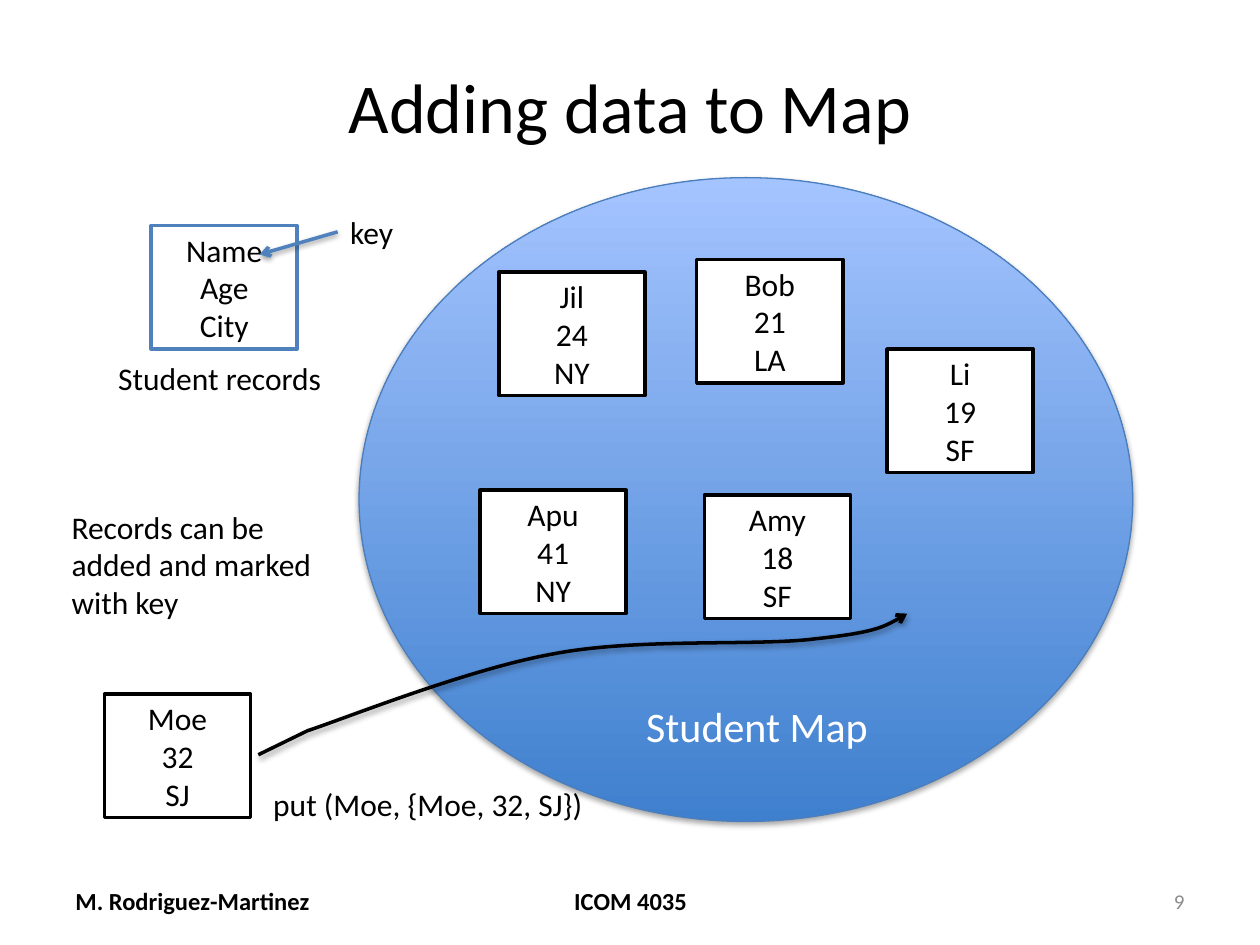
from lxml import etree
from pptx import Presentation
from pptx.dml.color import RGBColor
from pptx.enum.shapes import MSO_CONNECTOR, MSO_SHAPE
from pptx.enum.text import MSO_ANCHOR, MSO_AUTO_SIZE, PP_ALIGN
from pptx.oxml.ns import qn
from pptx.util import Inches, Pt

LEFT, MID, RIGHT = PP_ALIGN.LEFT, PP_ALIGN.CENTER, PP_ALIGN.RIGHT
TOP, HALF = MSO_ANCHOR.TOP, MSO_ANCHOR.MIDDLE
GROW = MSO_AUTO_SIZE.SHAPE_TO_FIT_TEXT
RECT, OVAL = MSO_SHAPE.RECTANGLE, MSO_SHAPE.OVAL
LINE = MSO_CONNECTOR.STRAIGHT
BLACK, WHITE, BLUE, GREY = "000000", "FFFFFF", "4F81BD", "8C8C8C"
COLS = 100
CARD = (11.6, 9.8)


def tint(code):
    return RGBColor.from_string(code)


class Deck:
    """Draws styled elements on a slide grid of 100 columns by 75 rows."""

    def __init__(self):
        self.show = Presentation()
        self.show.slide_width, self.show.slide_height = Inches(10), Inches(7.5)
        self.unit = self.show.slide_width / COLS
        self.font = "Calibri"
        self.slide = self.show.slides.add_slide(self.show.slide_layouts[6])

    def grid(self, *cells):
        return [round(cell * self.unit) for cell in cells]

    def fill_in(self, frame, lines, size, color, align, bold=False):
        for num, line in enumerate(lines):
            para = frame.add_paragraph() if num else frame.paragraphs[0]
            para.alignment = align
            run = para.add_run()
            run.text = line
            run.font.name, run.font.size, run.font.bold = self.font, Pt(size), bold
            run.font.color.rgb = tint(color)

    def text(self, place, lines, size=18, color=BLACK, align=LEFT, bold=False, fit=False):
        frame = self.slide.shapes.add_textbox(*self.grid(*place)).text_frame
        frame.word_wrap = not fit
        frame.vertical_anchor = TOP if fit else HALF
        if fit:
            frame.auto_size = GROW
        self.fill_in(frame, lines, size, color, align, bold)

    def label(self, place, *lines, size=18, color=BLACK):
        self.text(place, lines, size, color, fit=True)

    def stroke(self, shape, color, width=2):
        shape.line.color.rgb = tint(color)
        shape.line.width = Pt(width)

    def shade(self, shape, alpha, gap):
        props = shape.element.spPr
        group = props.find(qn("a:effectLst"))
        if group is None:
            group = etree.SubElement(props, qn("a:effectLst"))
        drop = etree.SubElement(group, qn("a:outerShdw"), blurRad=str(Pt(3.1)),
                                dist=str(Pt(gap)), dir="5400000", rotWithShape="0")
        ink = etree.SubElement(drop, qn("a:srgbClr"), val=BLACK)
        etree.SubElement(ink, qn("a:alpha"), val=str(alpha * 1000))

    def point(self, shape, color):
        self.stroke(shape, color)
        line = shape.element.spPr.find(qn("a:ln"))
        etree.SubElement(line, qn("a:tailEnd"), type="arrow")
        self.shade(shape, 38, 1.6)

    def card(self, left, top, lines, color=BLACK):
        box = self.slide.shapes.add_shape(RECT, *self.grid(left, top, *CARD))
        box.shadow.inherit = False
        box.fill.solid()
        box.fill.fore_color.rgb = tint(WHITE)
        self.stroke(box, color)
        box.text_frame.vertical_anchor = HALF
        self.fill_in(box.text_frame, lines, 18, BLACK, MID)

    def oval(self, place, low, high, edge):
        disc = self.slide.shapes.add_shape(OVAL, *self.grid(*place))
        disc.shadow.inherit = False
        disc.fill.gradient()
        disc.fill.gradient_angle = 90
        for stop, code in zip(disc.fill.gradient_stops, (low, high)):
            stop.color.rgb = tint(code)
        self.stroke(disc, edge, 0.75)
        self.shade(disc, 35, 1.8)

    def arrow(self, start, end, color):
        link = self.slide.shapes.add_connector(LINE, *self.grid(*start, *end))
        self.point(link, color)

    def curve(self, start, bend, knots, color):
        """Draws a straight run to the bend, then one Bezier per three knots."""
        pen = self.slide.shapes.build_freeform(*self.grid(*start))
        pen.add_line_segments([self.grid(*spot) for spot in (bend, *knots)], close=False)
        shape = pen.convert_to_shape()
        shape.shadow.inherit = False
        shape.fill.background()
        steps = list(shape.element.iter(qn("a:lnTo")))[1:]
        for num in range(0, len(steps), 3):
            arc = etree.Element(qn("a:cubicBezTo"))
            steps[num].addprevious(arc)
            for step in steps[num:num + 3]:
                arc.append(step[0])
                step.getparent().remove(step)
        self.point(shape, color)


def main():
    deck = Deck()
    deck.oval((28.5, 14.1, 61.4, 51.1), "3F80CE", "A4C4FF", "4B7EBC")
    deck.text((5, 3, 90, 10.7), ["Adding data to Map"], 40, align=MID)
    deck.text((5, 69.5, 23.3, 4), ["M. Rodriguez-Martinez"], 14, bold=True)
    deck.text((34.2, 69.5, 31.7, 4), ["ICOM 4035"], 14, align=MID, bold=True)
    deck.text((71.7, 69.5, 23.3, 4), ["9"], 12, GREY, RIGHT)

    deck.card(12, 17.9, ("Name", "Age", "City"), BLUE)
    for left, top, *lines in (
        (39.6, 21.6, "Jil", "24", "NY"),
        (55.3, 20.6, "Bob", "21", "LA"),
        (38.1, 38.9, "Apu", "41", "NY"),
        (55.9, 39.3, "Amy", "18", "SF"),
        (70.4, 27.7, "Li", "19", "SF"),
        (8.3, 55.1, "Moe", "32", "SJ"),
    ):
        deck.card(left, top, lines)

    deck.label((8.4, 28, 18.4, 4), "Student records")
    deck.label((50.3, 55.1, 19.8, 5), "Student Map", size=24, color=WHITE)
    deck.label((4.7, 39.8, 21.3, 10.1), "Records can be", "added and marked", "with key")
    deck.label((26.8, 16.4, 5.6, 4), "key")
    deck.label((20.7, 61.8, 26.8, 4), "put (Moe, {Moe, 32, SJ})")

    deck.arrow((26.8, 18.4), (20.6, 20.2), BLUE)
    deck.curve((20.5, 59.9), (24.4, 58), (
        (27.7, 56.9), (37.2, 53.1), (43.9, 51.9),
        (50.6, 50.6), (60, 51.3), (64.7, 50.7),
        (69.4, 50.2), (70.7, 49.5), (72, 48.7),
    ), BLACK)
    deck.show.save("out.pptx")


if __name__ == "__main__":
    main()
